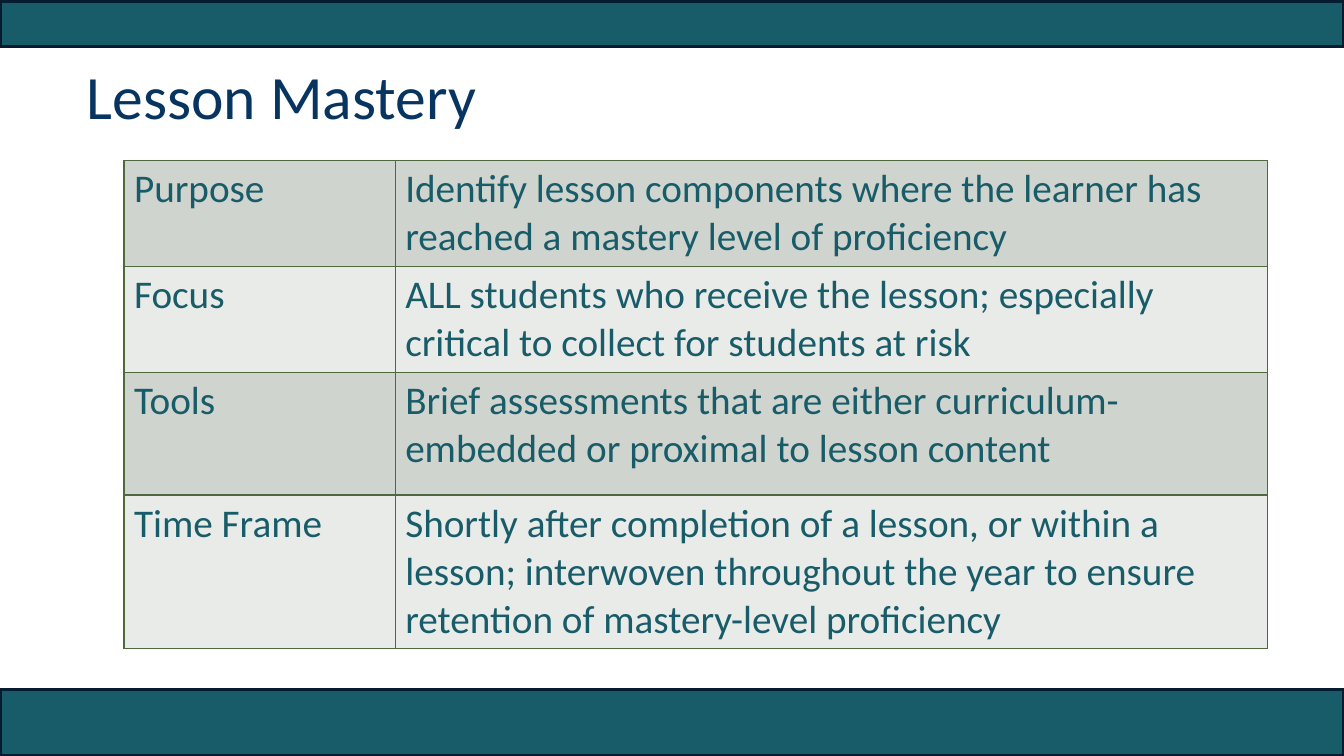
from dataclasses import dataclass

from lxml.etree import SubElement
from pptx import Presentation
from pptx.dml.color import RGBColor as Rgb
from pptx.enum.shapes import MSO_SHAPE as Kind
from pptx.enum.text import MSO_ANCHOR as Anchor, MSO_AUTO_SIZE as Fit, PP_ALIGN as Align
from pptx.oxml.ns import qn
from pptx.slide import Slide
from pptx.table import _Cell as Cell
from pptx.text.text import _Paragraph as Para
from pptx.util import Inches, Pt


@dataclass(frozen=True)
class Theme:
    font: str = "Calibri"
    head: int = 44
    body: int = 28
    navy: str = "08355F"
    teal: str = "185C69"
    edge: str = "041B30"
    rule: str = "4F693D"
    bands: tuple[str, str] = ("D0D4CE", "E9EBE8")


@dataclass(frozen=True)
class Bar:
    top: float
    height: float


@dataclass(frozen=True)
class Row:
    label: str
    text: str
    height: float = 0.89


THEME = Theme()
WIDTH = 13.33
COLS = (2.69, 8.65)
BARS = (Bar(6.84, 0.66), Bar(0.01, 0.45))
ROWS = (
    Row("Purpose", "Identify lesson components where the learner has "
        "reached a mastery level of proficiency"),
    Row("Focus", "ALL students who receive the lesson; especially "
        "critical to collect for students at risk"),
    Row("Tools", "Brief assessments that are either curriculum-embedded "
        "or proximal to lesson content", 1.22),
    Row("Time Frame", "Shortly after completion of a lesson, or within a "
        "lesson; interwoven throughout the year to ensure retention of "
        "mastery-level proficiency"),
)


def style(para: Para, size: int, color: str) -> None:
    para.alignment = Align.LEFT
    for run in para.runs:
        run.font.name = THEME.font
        run.font.size = Pt(size)
        run.font.bold = False
        run.font.color.rgb = Rgb.from_string(color)


def draw_bar(slide: Slide, bar: Bar) -> None:
    shape = slide.shapes.add_shape(
        Kind.RECTANGLE, 0, Inches(bar.top), Inches(WIDTH), Inches(bar.height))
    shape.shadow.inherit = False
    shape.fill.solid()
    shape.fill.fore_color.rgb = Rgb.from_string(THEME.teal)
    shape.line.color.rgb = Rgb.from_string(THEME.edge)
    shape.line.width = Pt(2.5)


def draw_title(slide: Slide, text: str) -> None:
    title = slide.shapes.title
    title.left, title.top = Inches(0.76), Inches(0.61)
    title.width, title.height = Inches(11.5), Inches(1.45)
    frame = title.text_frame
    frame.text = text
    frame.auto_size = Fit.NONE
    frame.vertical_anchor = Anchor.TOP
    para = frame.paragraphs[0]
    para.line_spacing = 0.9
    style(para, THEME.head, THEME.navy)


def add_edges(cell: Cell) -> None:
    props = cell._tc.get_or_add_tcPr()
    for spot, side in enumerate(("lnL", "lnR", "lnT", "lnB")):
        line = SubElement(props, qn(f"a:{side}"), w=str(Pt(1)))
        fill = SubElement(line, qn("a:solidFill"))
        SubElement(fill, qn("a:srgbClr"), val=THEME.rule)
        props.insert(spot, line)  # edges come before the cell fill


def draw_table(slide: Slide, rows: tuple[Row, ...]) -> None:
    high = Inches(4.79)
    frame = slide.shapes.add_table(
        len(rows), len(COLS), Inches(1.23), Inches(1.59), Inches(sum(COLS)), high)
    table = frame.table
    table.first_row = table.horz_banding = False
    for col, width in zip(table.columns, COLS):
        col.width = Inches(width)
    for i, row in enumerate(rows):
        table.rows[i].height = Inches(row.height)
        for j, text in enumerate((row.label, row.text)):
            cell = table.cell(i, j)
            cell.text_frame.text = text
            style(cell.text_frame.paragraphs[0], THEME.body, THEME.teal)
            cell.fill.solid()
            cell.fill.fore_color.rgb = Rgb.from_string(THEME.bands[i % 2])
            add_edges(cell)
    frame.height = high


def main() -> None:
    deck = Presentation()
    deck.slide_width, deck.slide_height = Inches(WIDTH), Inches(7.5)
    slide = deck.slides.add_slide(deck.slide_layouts.get_by_name("Title Only"))
    # Bands at the foot and head of the slide
    for bar in BARS:
        draw_bar(slide, bar)
    # Heading and table
    draw_title(slide, "Lesson Mastery")
    draw_table(slide, ROWS)
    deck.save("out.pptx")


if __name__ == "__main__":
    main()
